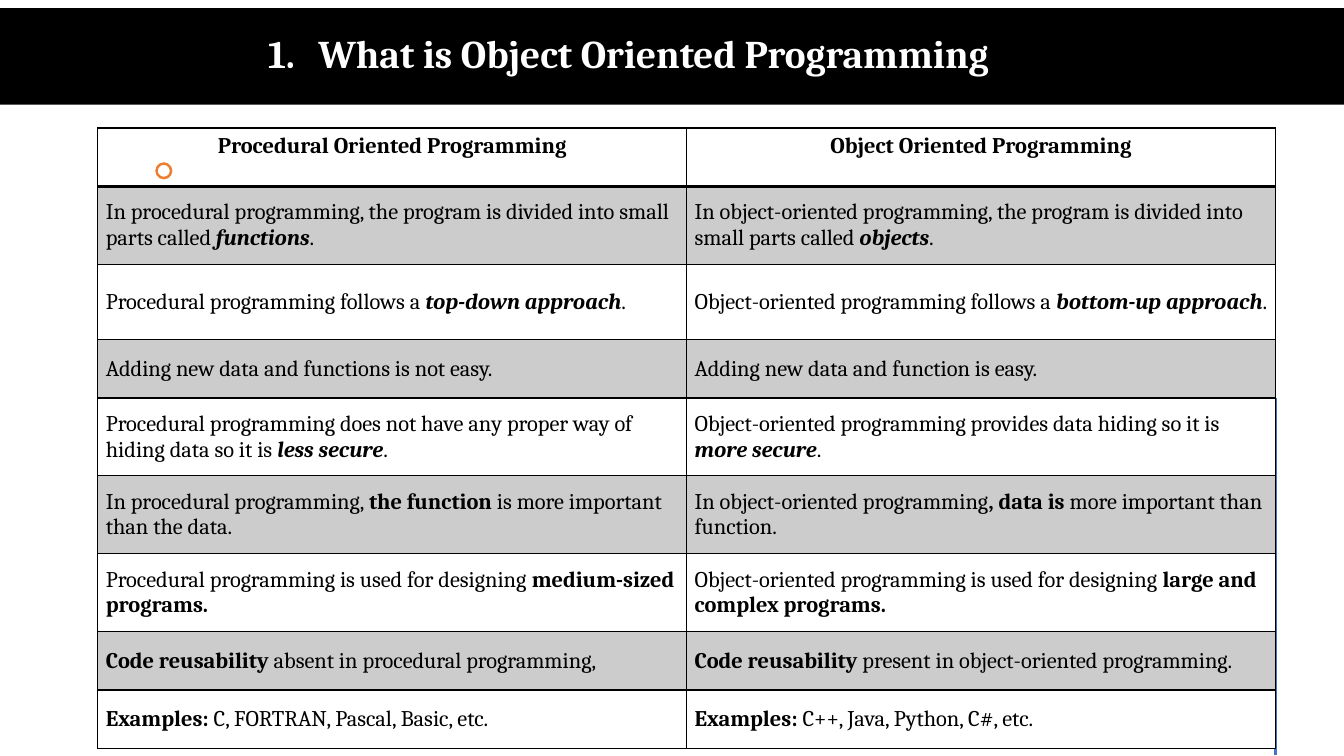
from pptx import Presentation
from pptx.dml.color import RGBColor
from pptx.enum.shapes import MSO_CONNECTOR, MSO_SHAPE
from pptx.enum.text import MSO_ANCHOR, PP_ALIGN
from pptx.oxml.ns import qn
from pptx.util import Inches, Pt
from lxml.etree import SubElement

# Content: each cell is (lead, strong words, tail)
TITLE = "What is Object Oriented Programming"
HEADS = ("Procedural Oriented Programming", "Object Oriented Programming")
ROWS = [
    (("In procedural programming, the program is divided into small parts called ", "functions", "."),
     ("In object-oriented programming, the program is divided into small parts called ", "objects", ".")),
    (("Procedural programming follows a ", "top-down approach", "."),
     ("Object-oriented programming follows a ", "bottom-up approach", ".")),
    (("Adding new data and functions is not easy.", "", ""),
     ("Adding new data and function is easy.", "", "")),
    (("Procedural programming does not have any proper way of hiding data so it is ", "less secure", "."),
     ("Object-oriented programming provides data hiding so it is ", "more secure", ".")),
    (("In procedural programming, ", "the function ", "is more important than the data."),
     ("In object-oriented programming", ", data is ", "more important than function.")),
    (("Procedural programming is used for designing ", "medium-sized programs.", ""),
     ("Object-oriented programming is used for designing ", "large and complex programs.", "")),
    (("", "Code reusability ", "absent in procedural programming,"),
     ("", "Code reusability ", "present in object-oriented programming.")),
    (("", "Examples:", " C, FORTRAN, Pascal, Basic, etc."),
     ("", "Examples: ", "C++, Java, Python, C#, etc.")),
]
ITALIC = (0, 1, 3)  # rows whose strong words are also italic
SHORT, TALL = 0.58, 0.745
HEIGHTS = [SHORT, TALL, TALL, SHORT, TALL, TALL, TALL, SHORT, SHORT]

THEME = {
    "font": "Cambria", "title": Pt(28), "body": Pt(16),
    "black": RGBColor(0, 0, 0), "white": RGBColor(255, 255, 255),
    "gray": RGBColor(0xCC, 0xCC, 0xCC), "ring": RGBColor(0xED, 0x7D, 0x31),
    "rule": RGBColor(0x44, 0x72, 0xC4),
}


def style(para, size, color, bold=None):
    font = para.font
    font.name, font.size, font.bold = THEME["font"], size, bold
    font.color.rgb = color


def solid(shape, color):
    shape.shadow.inherit = False
    shape.fill.solid()
    shape.fill.fore_color.rgb = color
    shape.line.fill.background()


def border(cell, top, bottom):
    props = cell._tc.get_or_add_tcPr()
    for side, width in (("L", 1), ("R", 1), ("T", top), ("B", bottom)):
        line = SubElement(props, qn("a:ln" + side), w=str(Pt(width)))
        fill = SubElement(line, qn("a:solidFill"))
        SubElement(fill, qn("a:srgbClr"), val=str(THEME["black"]))


def paint(cell, color):
    cell.fill.solid()
    cell.fill.fore_color.rgb = color


def write(cell, parts, italic):
    cell.vertical_anchor = MSO_ANCHOR.MIDDLE
    cell.margin_left = cell.margin_right = Inches(0.08)
    cell.margin_top = cell.margin_bottom = Inches(0.12)
    para = cell.text_frame.paragraphs[0]
    style(para, THEME["body"], THEME["black"])
    for part, text in enumerate(parts):
        if text:
            run = para.add_run()
            run.text = text
            run.font.bold = part == 1
            run.font.italic = part == 1 and italic


deck = Presentation()
deck.slide_width, deck.slide_height = Inches(13.33), Inches(7.5)
shapes = deck.slides.add_slide(deck.slide_layouts[6]).shapes

# Ring and side rule, behind the table
ring = shapes.add_shape(MSO_SHAPE.DONUT, Inches(1.54), Inches(1.61), Inches(0.17), Inches(0.17))
ring.adjustments[0] = 0.15
solid(ring, THEME["ring"])
rule = shapes.add_connector(MSO_CONNECTOR.STRAIGHT, Inches(12.65), Inches(3.95), Inches(12.65), Inches(7.49))
rule.line.color.rgb = THEME["rule"]
rule.line.width = Pt(2)
SubElement(rule._element.spPr, qn("a:effectLst"))

# Title band
band = shapes.add_shape(MSO_SHAPE.RECTANGLE, 0, Inches(0.08), Inches(13.33), Inches(0.96))
solid(band, THEME["black"])
frame = shapes.add_textbox(Inches(2.31), Inches(0.07), Inches(8.25), Inches(0.74)).text_frame
frame.word_wrap = True
frame.vertical_anchor = MSO_ANCHOR.BOTTOM
para = frame.paragraphs[0]
para.text = TITLE
para.line_spacing, para.space_after = 1.5, Pt(6)
style(para, THEME["title"], THEME["white"], True)
props = para._p.get_or_add_pPr()
props.set("marL", str(Inches(0.75)))
props.set("indent", str(Inches(-0.5)))
mark = SubElement(props, qn("a:buAutoNum"), type="arabicPeriod")
props.find(qn("a:defRPr")).addprevious(mark)

# Comparison table
table = shapes.add_table(len(HEIGHTS), len(HEADS), Inches(0.97), Inches(1.27),
                         Inches(11.68), Inches(sum(HEIGHTS))).table
table.first_row = table.horz_banding = False
for row, height in zip(table.rows, HEIGHTS):
    row.height = Inches(height)
for col, text in enumerate(HEADS):
    cell = table.cell(0, col)
    border(cell, 1, 2)
    paint(cell, THEME["white"])
    para = cell.text_frame.paragraphs[0]
    para.text, para.alignment = text, PP_ALIGN.CENTER
    style(para, THEME["body"], THEME["black"], True)
for row, pair in enumerate(ROWS):
    for col, parts in enumerate(pair):
        cell = table.cell(row + 1, col)
        border(cell, 1 if row else 2, 1)
        paint(cell, THEME["white"] if row % 2 else THEME["gray"])
        write(cell, parts, row in ITALIC)

# Ring shows above the header cell
shapes._spTree.append(ring._element)

deck.save("out.pptx")
